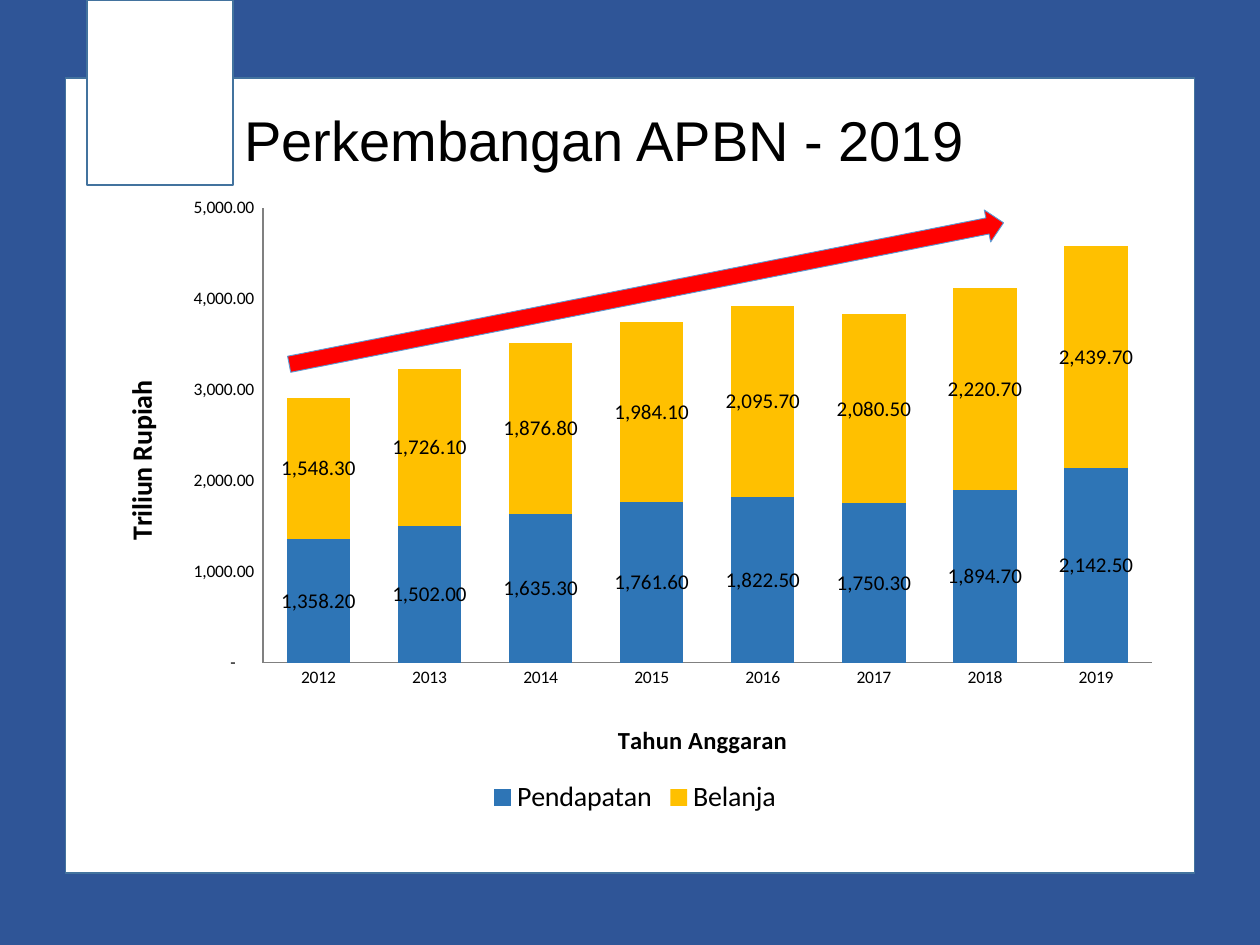
"""Build a slide with a stacked column chart of the state budget by year."""
from dataclasses import dataclass

import lxml.etree
import pptx
import pptx.chart.data
import pptx.dml.color
import pptx.enum.chart
import pptx.enum.shapes
import pptx.enum.text
import pptx.oxml.ns
import pptx.util

Inches = pptx.util.Inches
Pt = pptx.util.Pt
RGBColor = pptx.dml.color.RGBColor
MSO_SHAPE = pptx.enum.shapes.MSO_SHAPE
qn = pptx.oxml.ns.qn

NAVY = RGBColor(0x2F, 0x55, 0x97)
EDGE = RGBColor(0x43, 0x73, 0x9E)
WHITE = RGBColor(0xFF, 0xFF, 0xFF)
BLACK = RGBColor(0, 0, 0)
BLUE = RGBColor(0x2E, 0x75, 0xB6)
GOLD = RGBColor(0xFF, 0xC0, 0x00)
RED = RGBColor(0xFF, 0, 0)
SKY = RGBColor(0x5B, 0x9B, 0xD5)
GREY = RGBColor(0x80, 0x80, 0x80)

AXIS_FORMAT = '_-* #,##0.00_-;\\-* #,##0.00_-;_-* "-"??_-;_-@_-'


@dataclass
class Block:
    kind: MSO_SHAPE
    left: float
    top: float
    width: float
    height: float
    fill: RGBColor
    line: RGBColor
    weight: float = 1
    rotation: float = 0


@dataclass
class BudgetSeries:
    name: str
    values: list[float]
    color: RGBColor


FRAMES = [
    Block(MSO_SHAPE.RECTANGLE, 0.52, 0.62, 8.96, 6.31, WHITE, EDGE),
    Block(MSO_SHAPE.RECTANGLE, 0.69, 0, 1.16, 1.47, WHITE, EDGE),
]
TREND = Block(MSO_SHAPE.RIGHT_ARROW, 2.24, 2.2, 5.78, 0.26, RED, SKY, 0.5, 348.8)
YEARS = [str(year) for year in range(2012, 2020)]
BUDGET = [
    BudgetSeries("Pendapatan", [1358.2, 1502, 1635.3, 1761.6, 1822.5, 1750.3, 1894.7, 2142.5], BLUE),
    BudgetSeries("Belanja", [1548.3, 1726.1, 1876.8, 1984.1, 2095.7, 2080.5, 2220.7, 2439.7], GOLD),
]


def add_block(slide, block: Block) -> None:
    sp = slide.shapes.add_shape(
        block.kind, Inches(block.left), Inches(block.top), Inches(block.width), Inches(block.height)
    )
    sp.shadow.inherit = False
    sp.fill.solid()
    sp.fill.fore_color.rgb = block.fill
    sp.line.color.rgb = block.line
    sp.line.width = Pt(block.weight)
    sp.rotation = block.rotation


def set_font(font, size: float, bold: bool = False, name: str = "Calibri") -> None:
    font.size = Pt(size)
    font.bold = bold
    font.name = name
    font.color.rgb = BLACK


def set_layout(parent, index: int, **places) -> None:
    for old in parent.findall(qn("c:layout")):
        parent.remove(old)
    layout = lxml.etree.Element(qn("c:layout"))
    manual = lxml.etree.SubElement(layout, qn("c:manualLayout"))
    for tag, value in places.items():
        lxml.etree.SubElement(manual, qn(f"c:{tag}")).set("val", str(value))
    parent.insert(index, layout)


def style_axis(axis, title: str, size: float, x: float, y: float) -> None:
    axis.has_major_gridlines = False
    axis.major_tick_mark = pptx.enum.chart.XL_TICK_MARK.NONE
    axis.minor_tick_mark = pptx.enum.chart.XL_TICK_MARK.NONE
    axis.format.line.color.rgb = GREY
    axis.format.line.width = Pt(0.75)
    set_font(axis.tick_labels.font, 10)
    tf = axis.axis_title.text_frame
    tf.text = title
    set_font(tf.paragraphs[0].runs[0].font, size, True)
    set_layout(axis.axis_title._element, 1, xMode="edge", yMode="edge", x=x, y=y)


def add_budget_chart(slide) -> None:
    data = pptx.chart.data.CategoryChartData(number_format="#,##0.00")
    data.categories = YEARS
    for entry in BUDGET:
        data.add_series(entry.name, entry.values)
    chart = slide.shapes.add_chart(
        pptx.enum.chart.XL_CHART_TYPE.COLUMN_STACKED,
        Inches(0.76), Inches(1.47), Inches(8.56), Inches(5.04), data,
    ).chart
    chart.has_title = False
    set_font(chart.font, 10)

    plot = chart.plots[0]
    plot.gap_width = 75
    plot.overlap = 100
    plot.vary_by_categories = False
    for series, entry in zip(plot.series, BUDGET):
        series.format.fill.solid()
        series.format.fill.fore_color.rgb = entry.color
        labels = series.data_labels
        labels.show_value = True
        labels.number_format = "#,##0.00"
        labels.number_format_is_linked = False
        set_font(labels.font, 12)

    style_axis(chart.category_axis, "Tahun Anggaran", 14, 0.48, 0.84)
    axis = chart.value_axis
    style_axis(axis, "Triliun Rupiah", 16, 0.02, 0.3)
    axis.minimum_scale = 0
    axis.maximum_scale = 5000
    axis.major_unit = 1000
    axis.tick_labels.number_format = AXIS_FORMAT
    axis.tick_labels.number_format_is_linked = False

    chart.has_legend = True
    chart.legend.position = pptx.enum.chart.XL_LEGEND_POSITION.BOTTOM
    chart.legend.include_in_layout = False
    set_font(chart.legend.font, 16)
    set_layout(
        chart._chartSpace.chart.plotArea, 0, layoutTarget="inner",
        xMode="edge", yMode="edge", x=0.155, y=0.036, w=0.824, h=0.716,
    )


def add_title(slide, text: str) -> None:
    tf = slide.shapes.add_textbox(Inches(1.84), Inches(0.64), Inches(7.66), Inches(1)).text_frame
    tf.word_wrap = True
    tf.vertical_anchor = pptx.enum.text.MSO_ANCHOR.MIDDLE
    tf.text = text
    p = tf.paragraphs[0]
    p.line_spacing = 0.9
    set_font(p.runs[0].font, 32, name="Arial")


def main() -> None:
    prs = pptx.Presentation()
    prs.slide_width = Inches(10)
    prs.slide_height = Inches(7.5)
    slide = prs.slides.add_slide(prs.slide_layouts[6])
    slide.background.fill.solid()
    slide.background.fill.fore_color.rgb = NAVY
    for block in FRAMES:
        add_block(slide, block)
    add_budget_chart(slide)
    add_title(slide, "Perkembangan APBN - 2019")
    add_block(slide, TREND)
    prs.save("out.pptx")


if __name__ == "__main__":
    main()
